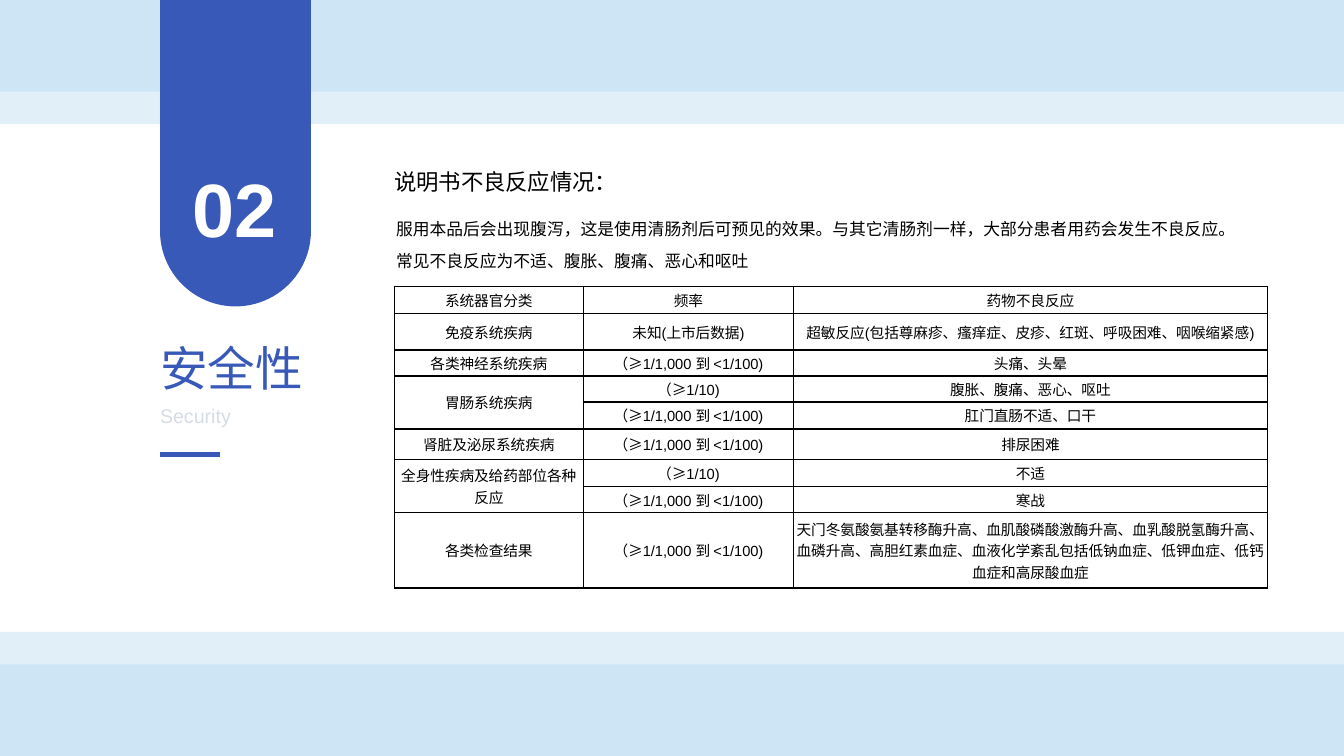
from lxml import etree
from pptx import Presentation
from pptx.dml.color import RGBColor
from pptx.enum.shapes import MSO_CONNECTOR, MSO_SHAPE
from pptx.enum.text import MSO_ANCHOR, MSO_AUTO_SIZE, PP_ALIGN
from pptx.oxml import parse_xml
from pptx.oxml.ns import nsdecls, qn
from pptx.util import Pt

COLORS = {"sky": "CEE5F6", "blue": "3959B9", "white": "FFFFFF", "gray": "D6DCE5", "black": "000000"}
WIDTH, HEIGHT = 960, 540

prs = Presentation()
prs.slide_width, prs.slide_height = Pt(WIDTH), Pt(HEIGHT)
slide = prs.slides.add_slide(prs.slide_layouts[6])
shapes = slide.shapes


def add_block(preset, left, top, width, height, color):
    block = shapes.add_shape(preset, Pt(left), Pt(top), Pt(width), Pt(height))
    block.shadow.inherit = False
    block.fill.solid()
    block.fill.fore_color.rgb = RGBColor.from_string(COLORS[color])
    block.line.fill.background()
    return block


def add_run(paragraph, text, size, color, bold=False):
    run = paragraph.add_run()
    run.text = text
    run.font.name = "Arial"
    run.font.size = Pt(size)
    run.font.bold = bold
    run.font.color.rgb = RGBColor.from_string(COLORS[color])


for band_height, opacity in [(88.6, 60), (65.5, 100)]:
    for band_top in (HEIGHT - band_height, 0):
        band = add_block(MSO_SHAPE.RECTANGLE, 0, band_top, WIDTH, band_height, "sky")
        if opacity < 100:
            tint = band.fill._xPr.find(".//" + qn("a:srgbClr"))
            etree.SubElement(tint, qn("a:alpha")).set("val", str(opacity * 1000))

ribbon = add_block(MSO_SHAPE.ROUND_2_SAME_RECTANGLE, 114.3, 0, 107.8, 218.9, "blue")
ribbon.adjustments[0] = 0
ribbon.adjustments[1] = 0.5

accent = shapes.add_connector(MSO_CONNECTOR.STRAIGHT, Pt(114.3), Pt(324.7), Pt(157.2), Pt(324.7))
accent.line.color.rgb = RGBColor.from_string(COLORS["blue"])
accent.line.width = Pt(3.5)
etree.SubElement(accent._element.spPr, qn("a:effectLst"))

intro = [
    "服用本品后会出现腹泻，这是使用清肠剂后可预见的效果。与其它清肠剂一样，大部分患者用药会发生不良反应。",
    "常见不良反应为不适、腹胀、腹痛、恶心和呕吐",
]
texts = [
    ((121, 123.1, 93.6, 59), ["02"], 54, "white", True, PP_ALIGN.CENTER, 0.9, 10, (0, 0)),
    ((114.3, 247, 236.9, 36.7), ["安全性"], 34, "blue", False, PP_ALIGN.LEFT, 0.9, 10, (0, 0)),
    ((114.3, 290.2, 236.9, 15.1), ["Security"], 14, "gray", False, PP_ALIGN.LEFT, 0.9, 10, (0, 0)),
    ((275.8, 144, 657.4, 51.1), intro, 12, "black", False, PP_ALIGN.LEFT, 1.6, 0, (7.2, 3.6)),
    ((281.5, 116.6, 232.6, 21.6), ["说明书不良反应情况："], 16, "black", False, PP_ALIGN.JUSTIFY, 1.2, 0, (0, 0)),
]
for place, lines, size, color, bold, align, spacing, before, (inset_x, inset_y) in texts:
    frame = shapes.add_textbox(*map(Pt, place)).text_frame
    frame.word_wrap = True
    frame.auto_size = MSO_AUTO_SIZE.SHAPE_TO_FIT_TEXT
    frame.margin_left = frame.margin_right = Pt(inset_x)
    frame.margin_top = frame.margin_bottom = Pt(inset_y)
    for index, line in enumerate(lines):
        paragraph = frame.add_paragraph() if index else frame.paragraphs[0]
        paragraph.alignment = align
        paragraph.line_spacing = spacing
        paragraph.space_before = Pt(before)
        add_run(paragraph, line, size, color, bold)

COMMON = "（≥1/10)"
UNCOMMON = "（≥1/1,000 到 <1/100)"
reactions = [
    ("系统器官分类", "频率", "药物不良反应"),
    ("免疫系统疾病", "未知(上市后数据)", "超敏反应(包括尊麻疹、瘙痒症、皮疹、红斑、呼吸困难、咽喉缩紧感)"),
    ("各类神经系统疾病", UNCOMMON, "头痛、头晕"),
    ("胃肠系统疾病", COMMON, "腹胀、腹痛、恶心、呕吐"),
    (None, UNCOMMON, "肛门直肠不适、口干"),
    ("肾脏及泌尿系统疾病", UNCOMMON, "排尿困难"),
    ("全身性疾病及给药部位各种反应", COMMON, "不适"),
    (None, UNCOMMON, "寒战"),
    ("各类检查结果", UNCOMMON,
     "天门冬氨酸氨基转移酶升高、血肌酸磷酸激酶升高、血乳酸脱氢酶升高、血磷升高、高胆红素血症、"
     "血液化学紊乱包括低钠血症、低钾血症、低钙血症和高尿酸血症"),
]
column_widths = [135, 150.2, 338.4]
row_heights = [19.2, 26.2, 18.6, 18.6, 19.2, 21.8, 19.4, 18.8, 53.7]
table = shapes.add_table(len(reactions), 3, Pt(281.7), Pt(204.6),
                         Pt(sum(column_widths)), Pt(sum(row_heights))).table
table.first_row = table.horz_banding = False
for column, width in zip(table.columns, column_widths):
    column.width = Pt(width)
for row, height in zip(table.rows, row_heights):
    row.height = Pt(height)

for r, row in enumerate(reactions):
    for c, text in enumerate(row):
        cell = table.cell(r, c)
        cell.fill.background()
        cell.vertical_anchor = MSO_ANCHOR.MIDDLE
        cell.margin_left = cell.margin_right = cell.margin_top = cell.margin_bottom = 0
        for position, side in enumerate("LRTB"):
            border = parse_xml(
                f'<a:ln{side} {nsdecls("a")} w="{Pt(1)}"><a:solidFill>'
                f'<a:srgbClr val="{COLORS["black"]}"/></a:solidFill></a:ln{side}>')
            cell._tc.tcPr.insert(position, border)
        if text is None:
            table.cell(r - 1, c).merge(cell)
        else:
            paragraph = cell.text_frame.paragraphs[0]
            paragraph.alignment = PP_ALIGN.CENTER
            add_run(paragraph, text, 10.5, "black")

prs.save("out.pptx")
